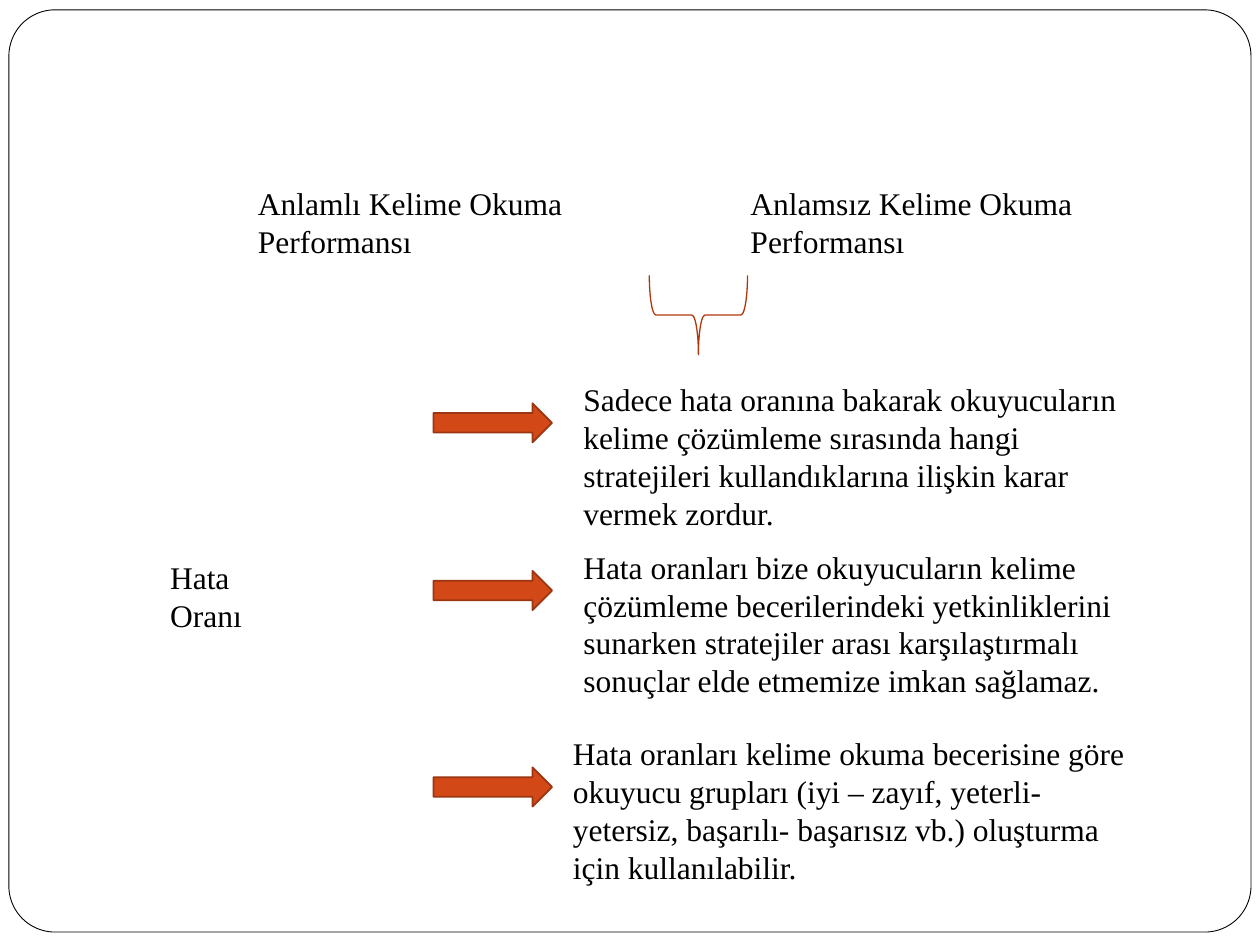
from dataclasses import dataclass
from typing import Optional

from pptx import Presentation
from pptx import util as u
from pptx.dml.color import RGBColor
from pptx.enum import shapes, text

COLORS = {
    "paper": "FFFFFF",
    "ink": "000000",
    "brace": "B1360B",
    "arrow": "D34817",
    "arrow_edge": "9C3511",
}
FONT = "Times New Roman"
ARROW_LEFT, ARROW_W, ARROW_H = 8.74, 2.39, 0.79
FINDING_W = 11.91


@dataclass
class Box:
    """Position and size in centimetres."""
    left: float
    top: float
    width: float
    height: float

    def lengths(self) -> list:
        return [u.Cm(v) for v in (self.left, self.top, self.width, self.height)]


@dataclass
class Label:
    box: Box
    words: str


@dataclass
class Finding:
    arrow_top: float
    label: Label


def rgb(name: str) -> RGBColor:
    return RGBColor.from_string(COLORS[name])


def draw_label(s, label: Label) -> None:
    tf = s.shapes.add_textbox(*label.box.lengths()).text_frame
    tf.word_wrap = True
    tf.auto_size = text.MSO_AUTO_SIZE.SHAPE_TO_FIT_TEXT
    tf.text = label.words
    font = tf.paragraphs[0].runs[0].font
    font.name, font.size = FONT, u.Pt(18)
    font.color.rgb = rgb("ink")


def draw_shape(s, kind, box: Box, line: str, weight: float,
               fill: Optional[str] = None):
    sp = s.shapes.add_shape(kind, *box.lengths())
    sp.shadow.inherit = False
    if fill:
        sp.fill.solid()
        sp.fill.fore_color.rgb = rgb(fill)
    else:
        sp.fill.background()
    sp.line.color.rgb = rgb(line)
    sp.line.width = u.Pt(weight)
    return sp


LABELS = [
    Label(Box(4.95, 3.58, 9.73, 1.02), "Anlamlı Kelime Okuma Performansı"),
    Label(Box(14.88, 3.58, 9.73, 1.02), "Anlamsız Kelime Okuma Performansı"),
    Label(Box(3.18, 11.13, 3.18, 1.02), "Hata Oranı"),
]

FINDINGS = [
    Finding(8.13, Label(
        Box(11.51, 7.54, FINDING_W, 2.57),
        "Sadece hata oranına bakarak okuyucuların kelime çözümleme sırasında "
        "hangi stratejileri kullandıklarına ilişkin karar vermek zordur.")),
    Finding(11.51, Label(
        Box(11.51, 10.92, FINDING_W, 3.33),
        "Hata oranları bize okuyucuların kelime çözümleme becerilerindeki "
        "yetkinliklerini sunarken stratejiler arası karşılaştırmalı sonuçlar "
        "elde etmemize imkan sağlamaz.")),
    Finding(15.47, Label(
        Box(11.3, 14.68, FINDING_W, 3.33),
        "Hata oranları kelime okuma becerisine göre okuyucu grupları "
        "(iyi – zayıf, yeterli-yetersiz, başarılı- başarısız vb.) oluşturma "
        "için kullanılabilir.")),
]


def main() -> None:
    prs = Presentation()
    prs.slide_width, prs.slide_height = u.Cm(25.4), u.Cm(19.05)
    s = prs.slides.add_slide(prs.slide_layouts[6])
    kinds = shapes.MSO_SHAPE

    # Rounded frame around the slide
    frame = draw_shape(s, kinds.ROUNDED_RECTANGLE,
                       Box(0.18, 0.2, 25.04, 18.59), "ink", 0.5, "paper")
    frame.adjustments[0] = 0.05

    # Headings and the side label
    for label in LABELS:
        draw_label(s, label)

    # Brace pointing down from the two headings
    brace = draw_shape(s, kinds.LEFT_BRACE,
                       Box(13.28, 5.36, 1.6, 1.98), "brace", 0.75)
    brace.rotation = 270

    # Findings, each with its arrow
    for finding in FINDINGS:
        draw_shape(s, kinds.RIGHT_ARROW,
                   Box(ARROW_LEFT, finding.arrow_top, ARROW_W, ARROW_H),
                   "arrow_edge", 1, "arrow")
        draw_label(s, finding.label)

    prs.save("out.pptx")


if __name__ == "__main__":
    main()
